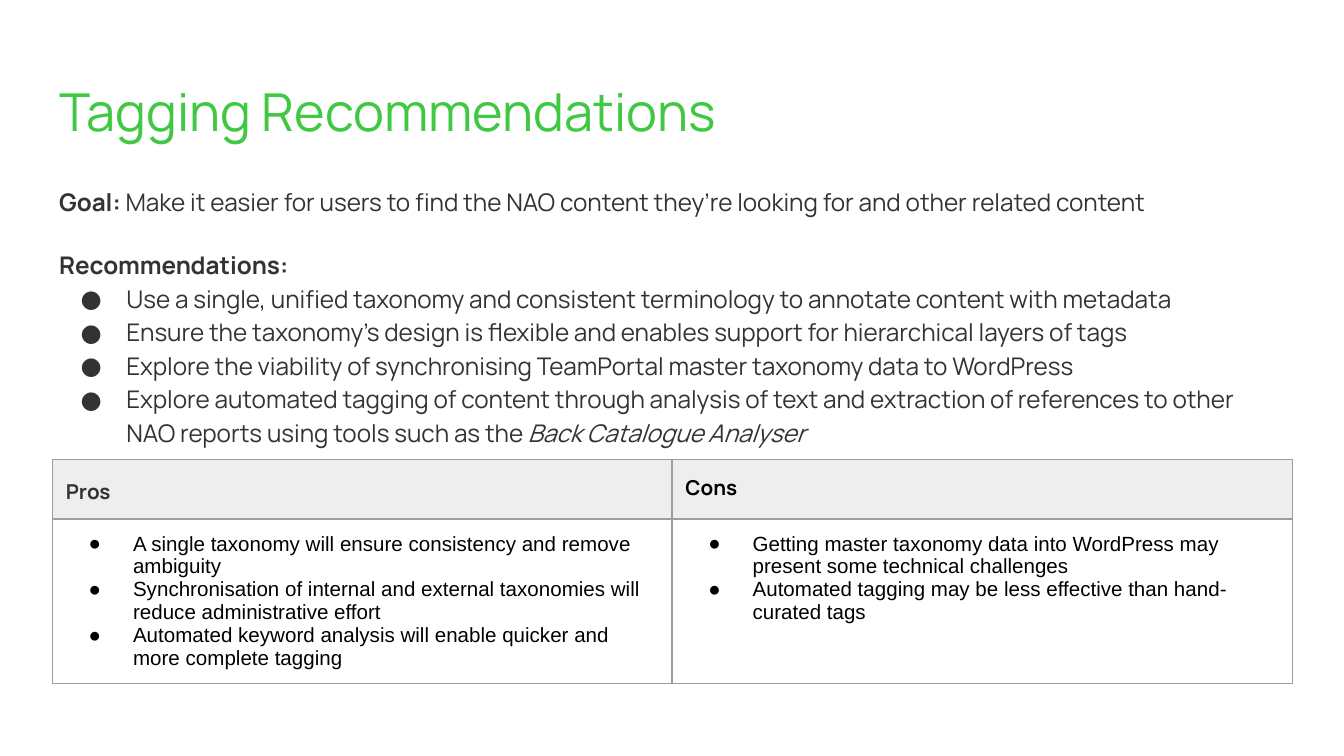
import dataclasses

import pptx
import pptx.dml.color
import pptx.enum.text
import pptx.oxml.ns
import pptx.util
from lxml import etree

Inches, Pt = pptx.util.Inches, pptx.util.Pt
SLIDE_WIDTH = Inches(10)
SLIDE_HEIGHT = SLIDE_WIDTH * 9 // 16


@dataclasses.dataclass(frozen=True)
class Theme:
    heading_font: str = "Manrope"
    table_font: str = "Arial"
    green: str = "40C842"
    dark: str = "333333"
    black: str = "000000"
    border: str = "9E9E9E"
    header_fill: str = "EEEEEE"
    title_size: float = 28
    body_size: float = 13
    table_size: float = 11
    border_width: float = 0.75
    inset: float = 0.1


THEME = Theme()
TITLE_STYLE = {"name": THEME.heading_font, "size": Pt(THEME.title_size), "color": THEME.green}
BODY_STYLE = {"name": THEME.heading_font, "size": Pt(THEME.body_size), "color": THEME.dark}
HEADER_STYLE = {"name": THEME.heading_font, "size": Pt(THEME.table_size), "bold": True}
CELL_STYLE = {"name": THEME.table_font, "size": Pt(THEME.table_size), "color": THEME.black}
MARGINS = {f"margin_{side}": Inches(THEME.inset) for side in ("left", "top", "right", "bottom")}

RECOMMENDATIONS = [
    [("Use a single, unified taxonomy and consistent terminology to annotate content with metadata", {})],
    [("Ensure the taxonomy’s design is flexible and enables support for hierarchical layers of tags", {})],
    [("Explore the viability of synchronising TeamPortal master taxonomy data to WordPress", {})],
    [("Explore automated tagging of content through analysis of text and extraction of references "
      "to other NAO reports using tools such as the ", {}),
     ("Back Catalogue Analyser", {"italic": True})],
]
PROS = [
    "A single taxonomy will ensure consistency and remove ambiguity",
    "Synchronisation of internal and external taxonomies will reduce administrative effort",
    "Automated keyword analysis will enable quicker and more complete tagging",
]
CONS = [
    "Getting master taxonomy data into WordPress may present some technical challenges",
    "Automated tagging may be less effective than hand-curated tags",
]


def add_element(parent, tag, **attributes):
    return etree.SubElement(parent, pptx.oxml.ns.qn(tag), attributes)


def set_attributes(target, values):
    for name, value in values.items():
        setattr(target, name, value)


def format_font(font, style):
    for name, value in style.items():
        if name == "color":
            font.color.rgb = pptx.dml.color.RGBColor.from_string(value)
        else:
            setattr(font, name, value)


def set_bullet(paragraph, color=None, font=None, hanging=0):
    """Give the paragraph a round bullet, or clear the inherited one."""
    properties = paragraph._p.get_or_add_pPr()
    properties.set("marL", str(Inches(0.5) if color else 0))
    properties.set("indent", str(-Inches(hanging)))
    if color:
        add_element(add_element(properties, "a:buClr"), "a:srgbClr", val=color)
        add_element(properties, "a:buFont", typeface=font)
        add_element(properties, "a:buChar", char="●")
    else:
        add_element(properties, "a:buNone")


def write_paragraphs(text_frame, paragraphs, style):
    """Each paragraph is (runs, layout, bullet); each run is (text, changes)."""
    for index, (runs, layout, bullet) in enumerate(paragraphs):
        paragraph = text_frame.add_paragraph() if index else text_frame.paragraphs[0]
        set_bullet(paragraph, **bullet)
        set_attributes(paragraph, {"alignment": pptx.enum.text.PP_ALIGN.LEFT,
                                   "space_before": Pt(0), **layout})
        for text, changes in runs:
            run = paragraph.add_run()
            run.text = text
            format_font(run.font, {**style, **changes})


def fill_placeholder(placeholder, top, height, paragraphs, style):
    left = 0.034 * SLIDE_WIDTH
    set_attributes(placeholder, {"left": int(left), "top": Inches(top),
                                 "width": int(SLIDE_WIDTH - 2 * left), "height": Inches(height)})
    set_attributes(placeholder.text_frame, {
        **MARGINS, "word_wrap": True,
        "auto_size": pptx.enum.text.MSO_AUTO_SIZE.NONE,
        "vertical_anchor": pptx.enum.text.MSO_ANCHOR.TOP})
    write_paragraphs(placeholder.text_frame, paragraphs, style)


def format_cell(cell, fill=None):
    set_attributes(cell, MARGINS)
    properties = cell._tc.get_or_add_tcPr()
    for side in "LRTB":
        line = add_element(properties, f"a:ln{side}", w=str(Pt(THEME.border_width)))
        add_element(add_element(line, "a:solidFill"), "a:srgbClr", val=THEME.border)
    if fill:
        cell.fill.solid()
        cell.fill.fore_color.rgb = pptx.dml.color.RGBColor.from_string(fill)
    else:
        cell.fill.background()


def add_comparison(slide, columns):
    """Each column is (heading, heading colour, heading layout, points)."""
    column_widths = [Inches(4.61), Inches(4.62)]
    row_heights = [Inches(0.44), Inches(1.22)]
    table = slide.shapes.add_table(len(row_heights), len(columns), Inches(0.39), Inches(3.42),
                                   sum(column_widths), sum(row_heights)).table
    set_attributes(table, {"first_row": False, "horz_banding": False})
    for column, width in zip(table.columns, column_widths):
        column.width = width
    for row, height in zip(table.rows, row_heights):
        row.height = height
    for index, (heading, color, layout, points) in enumerate(columns):
        header, body = table.cell(0, index), table.cell(1, index)
        format_cell(header, THEME.header_fill)
        write_paragraphs(header.text_frame, [([(heading, {"color": color})], layout, {})], HEADER_STYLE)
        format_cell(body)
        bullet = {"color": THEME.black, "font": THEME.table_font, "hanging": 0.33}
        write_paragraphs(body.text_frame, [([(point, {})], {}, bullet) for point in points], CELL_STYLE)


def main():
    presentation = pptx.Presentation()
    set_attributes(presentation, {"slide_width": SLIDE_WIDTH, "slide_height": SLIDE_HEIGHT})
    slide = presentation.slides.add_slide(presentation.slide_layouts[1])

    # Title
    fill_placeholder(slide.shapes.title, 0.49, 0.63,
                     [([("Tagging Recommendations", {})], {}, {})], TITLE_STYLE)

    # Goal and recommendations
    spacing = {"line_spacing": 1.15}
    bold = {"bold": True}
    goal = [("Goal: ", bold),
            ("Make it easier for users to find the NAO content they’re looking for "
             "and other related content", {})]
    paragraphs = [(goal, spacing, {}),
                  ([("Recommendations:", bold)], {**spacing, "space_before": Pt(16)}, {})]
    bullet = {"color": THEME.dark, "font": THEME.heading_font, "hanging": 0.34}
    paragraphs += [(runs, spacing, bullet) for runs in RECOMMENDATIONS]
    fill_placeholder(slide.placeholders[1], 1.26, 3.74, paragraphs, BODY_STYLE)

    # Pros and cons
    add_comparison(slide, [
        ("Pros", THEME.dark, {**spacing, "space_after": Pt(16)}, PROS),
        ("Cons", THEME.black, {}, CONS),
    ])
    presentation.save("out.pptx")


if __name__ == "__main__":
    main()
